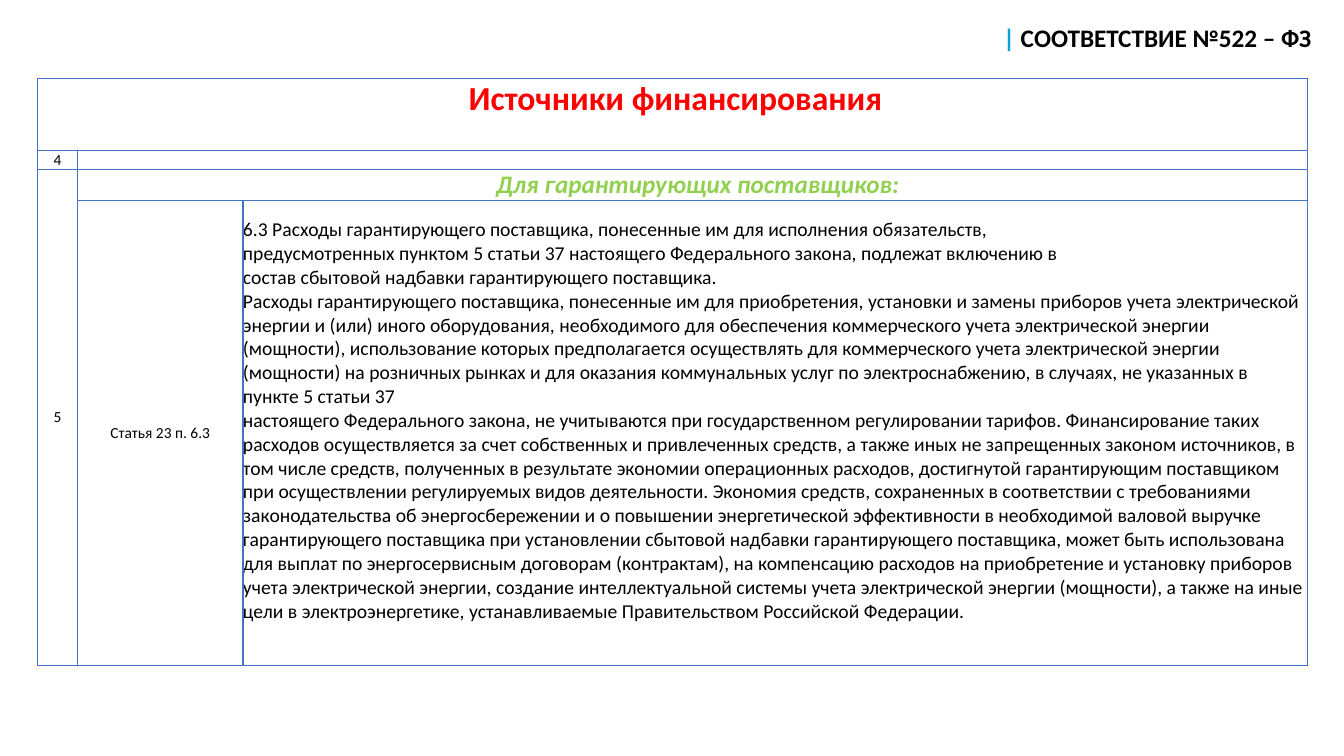
from copy import deepcopy
from dataclasses import dataclass

from lxml.etree import SubElement
from pptx import Presentation
from pptx.dml.color import RGBColor
from pptx.enum.text import MSO_ANCHOR, PP_ALIGN
from pptx.oxml.ns import qn
from pptx.util import Inches, Pt


@dataclass(frozen=True)
class Theme:
    """Colours and type sizes of the slide."""
    font: str = "Calibri"
    black: str = "000000"
    accent: str = "00A5D8"
    red: str = "FF0000"
    green: str = "92D050"
    border: str = "4472C4"
    title: int = 24
    heading: int = 18
    body: int = 14
    label: int = 11


THEME = Theme()

TARIFF_SENTENCES = [
    "настоящего Федерального закона, не учитываются при государственном регулировании тарифов.",
    "Финансирование таких расходов осуществляется за счет собственных и привлеченных средств, "
    "а также иных не запрещенных законом источников, в том числе средств, полученных в "
    "результате экономии операционных расходов, достигнутой гарантирующим поставщиком при "
    "осуществлении регулируемых видов деятельности.",
    "Экономия средств, сохраненных в соответствии с требованиями "
    "законодательства об энергосбережении и о повышении "
    "энергетической эффективности в необходимой валовой выручке гарантирующего поставщика при "
    "установлении сбытовой надбавки гарантирующего поставщика, может быть использована для "
    "выплат по энергосервисным договорам (контрактам), на компенсацию расходов на "
    "приобретение и установку приборов учета электрической энергии, создание "
    "интеллектуальной системы учета электрической энергии (мощности), а также на иные цели в "
    "электроэнергетике, устанавливаемые Правительством Российской Федерации.",
]

FINANCING_LINES = [
    "6.3 Расходы гарантирующего поставщика, понесенные им для исполнения обязательств,",
    "предусмотренных пунктом 5 статьи 37 настоящего Федерального закона, подлежат включению в",
    "состав сбытовой надбавки гарантирующего поставщика.",
    "Расходы гарантирующего поставщика, понесенные им для приобретения, установки и замены "
    "приборов учета электрической энергии и (или) иного оборудования, необходимого для "
    "обеспечения коммерческого учета электрической энергии (мощности), использование которых "
    "предполагается осуществлять для коммерческого учета электрической энергии (мощности) на "
    "розничных рынках и для оказания коммунальных услуг по электроснабжению, в случаях, не "
    "указанных в пункте 5 статьи 37",
    " ".join(TARIFF_SENTENCES),
]


def add_text(paragraph, text, size=THEME.label, color=THEME.black, bold=False,
             italic=False, align=PP_ALIGN.LEFT):
    """Append formatted text, turning each newline into a line break."""
    paragraph.alignment = align
    for index, line in enumerate(text.split("\n")):
        if index:
            paragraph.add_line_break()
        run = paragraph.add_run()
        run.text = line
        run.font.name = THEME.font
        run.font.size = Pt(size)
        run.font.bold = bold
        run.font.italic = italic
        run.font.color.rgb = RGBColor.from_string(color)
        if index:
            line_break = run._r.getprevious()
            line_break.append(deepcopy(run._r.find(qn("a:rPr"))))


def style_cell(cell):
    """Give a cell thin borders, no fill, no insets and a small empty-line size."""
    cell.margin_left = cell.margin_right = cell.margin_top = cell.margin_bottom = 0
    cell.vertical_anchor = MSO_ANCHOR.MIDDLE
    properties = cell._tc.get_or_add_tcPr()
    for side in ("a:lnL", "a:lnR", "a:lnT", "a:lnB"):
        line = SubElement(properties, qn(side), w=str(Pt(1)))
        fill = SubElement(line, qn("a:solidFill"))
        SubElement(fill, qn("a:srgbClr"), val=THEME.border)
    cell.fill.background()
    paragraph = cell.text_frame.paragraphs[0]
    SubElement(paragraph._p, qn("a:endParaRPr"), sz=str(THEME.label * 100))


def add_header(slide, left, top, width, height):
    """Place the slide heading with its coloured bar."""
    text_box = slide.shapes.add_textbox(Inches(left), Inches(top), Inches(width), Inches(height))
    text_box.text_frame.word_wrap = True
    paragraph = text_box.text_frame.paragraphs[0]
    add_text(paragraph, "| ", size=THEME.heading, color=THEME.accent, bold=True)
    add_text(paragraph, "СООТВЕТСТВИЕ №522 – ФЗ", size=THEME.heading, bold=True)


def add_financing_table(slide, left, top, column_widths, row_heights):
    """Place the table of financing sources."""
    frame = slide.shapes.add_table(
        len(row_heights), len(column_widths), Inches(left), Inches(top),
        Inches(sum(column_widths)), Inches(sum(row_heights)))
    table = frame.table
    table.first_row = table.horz_banding = False
    for column, width in zip(table.columns, column_widths):
        column.width = Inches(width)
    for row, height in zip(table.rows, row_heights):
        row.height = Inches(height)
    for cell in table.iter_cells():
        style_cell(cell)
    for first, last in (((0, 0), (0, 2)), ((1, 1), (1, 2)), ((2, 0), (3, 0)), ((2, 1), (2, 2))):
        table.cell(*first).merge(table.cell(*last))

    center = PP_ALIGN.CENTER
    contents = {
        (0, 0): ("Источники финансирования",
                 dict(size=THEME.title, color=THEME.red, bold=True, align=center)),
        (1, 0): ("4", dict(align=center)),
        (2, 0): ("5", dict(align=center)),
        (2, 1): ("Для гарантирующих поставщиков:",
                 dict(size=THEME.heading, color=THEME.green, bold=True, italic=True,
                      align=center)),
        (3, 1): ("Статья 23 п. 6.3", dict(align=center)),
        (3, 2): ("\n".join(FINANCING_LINES), dict(size=THEME.body)),
    }
    for position, (text, text_format) in contents.items():
        add_text(table.cell(*position).text_frame.paragraphs[0], text, **text_format)

    title, subtitle, body = table.cell(0, 0), table.cell(2, 1), table.cell(3, 2)
    title.vertical_anchor = MSO_ANCHOR.TOP
    title.margin_left = Inches(0.06)
    subtitle.vertical_anchor = MSO_ANCHOR.BOTTOM
    subtitle.margin_left = Inches(0.1)
    body.margin_bottom = Inches(0.24)


def main():
    """Build and save the presentation."""
    presentation = Presentation()
    presentation.slide_width = Inches(13.33)
    presentation.slide_height = Inches(7.5)
    slide = presentation.slides.add_slide(presentation.slide_layouts[6])
    add_financing_table(slide, 0.37, 0.78, (0.4, 1.64, 10.56), (0.71, 0.18, 0.31, 4.61))
    add_header(slide, 9.85, 0.17, 3.39, 0.4)
    presentation.save("out.pptx")


if __name__ == "__main__":
    main()
